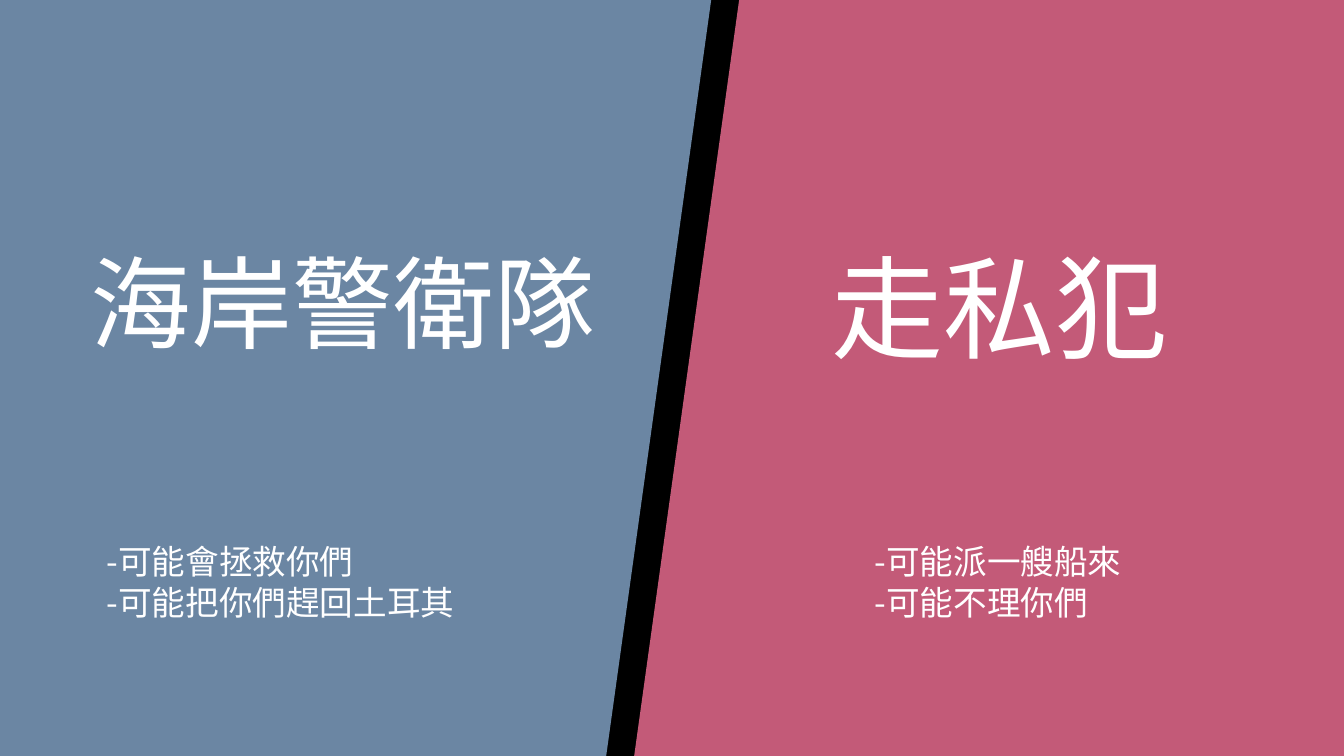
from pptx import Presentation
from pptx import util as u
from pptx.dml.color import RGBColor
from pptx.enum import text as t
from pptx.oxml.ns import qn

COLOURS = {"black": "000000", "blue": "6B86A3", "rose": "C35A78", "white": "FFFFFF"}
WIDTH, HEIGHT = 960, 540


def paint(fill, name):
    """Fill with a solid named colour."""
    fill.solid()
    fill.fore_color.rgb = RGBColor.from_string(COLOURS[name])


def add_panel(page, corners, name):
    """Draw a borderless panel behind the text."""
    points = [(u.Pt(x), u.Pt(y)) for x, y in corners]
    builder = page.shapes.build_freeform(*points[0], scale=1.0)
    builder.add_line_segments(points[1:], close=True)
    panel = builder.convert_to_shape()
    panel.shadow.inherit = False
    paint(panel.fill, name)
    panel.line.fill.background()
    panel.element.getparent().insert(2, panel.element)


def fill_box(box, place, lines, size, font, align, spacing):
    """Move a placeholder and write its unbulleted lines."""
    box.left, box.top, box.width, box.height = map(u.Pt, place)
    frame = box.text_frame
    frame.word_wrap = True
    frame.auto_size = t.MSO_AUTO_SIZE.NONE
    frame.vertical_anchor = t.MSO_ANCHOR.TOP
    for index, line in enumerate(lines):
        para = frame.add_paragraph() if index else frame.paragraphs[0]
        para.alignment = align
        para.space_before = para.space_after = u.Pt(0)
        para.line_spacing = spacing
        props = para._p.get_or_add_pPr()
        props.set("marL", "0")
        props.set("indent", "0")
        props.append(props.makeelement(qn("a:buNone"), {}))
        span = para.add_run()
        span.text = line
        span.font.size = u.Pt(size)
        span.font.name = font
        span.font.bold = False
        paint(span.font.fill, "white")


def add_heading(box, place, words, size):
    """Write a large centred heading."""
    fill_box(box, place, [words], size, "Calibri", t.PP_ALIGN.CENTER, 1.0)


def add_list(box, place, lines):
    """Write a list of possible outcomes."""
    fill_box(box, place, lines, 24, "Noto Sans CJK JP", t.PP_ALIGN.LEFT, u.Pt(28.8))


def main():
    """Build the comparison slide."""
    deck = Presentation()
    deck.slide_width, deck.slide_height = u.Pt(WIDTH), u.Pt(HEIGHT)
    page = deck.slides.add_slide(deck.slide_layouts.get_by_name("Comparison"))
    paint(page.background.fill, "black")
    boxes = {box.placeholder_format.idx: box for box in page.placeholders}

    add_panel(page, [(0, 0), (508, 0), (433, HEIGHT), (0, HEIGHT)], "blue")
    add_panel(page, [(528, 0), (WIDTH, 0), (WIDTH, HEIGHT), (453, HEIGHT)], "rose")
    add_heading(boxes[0], (40.5, 168.5, 409, 94.5), "海岸警衛隊", 72)
    add_heading(boxes[3], (492.5, 166.5, 443, 104.5), "走私犯", 80)
    add_list(boxes[2], (69, 383, 384, 65.5), ["-可能會拯救你們", "-可能把你們趕回土耳其"])
    add_list(boxes[4], (617.5, 383, 299.5, 65.5), ["-可能派一艘船來", "-可能不理你們"])
    unused = boxes[1].element
    unused.getparent().remove(unused)
    deck.save("out.pptx")


if __name__ == "__main__":
    main()
